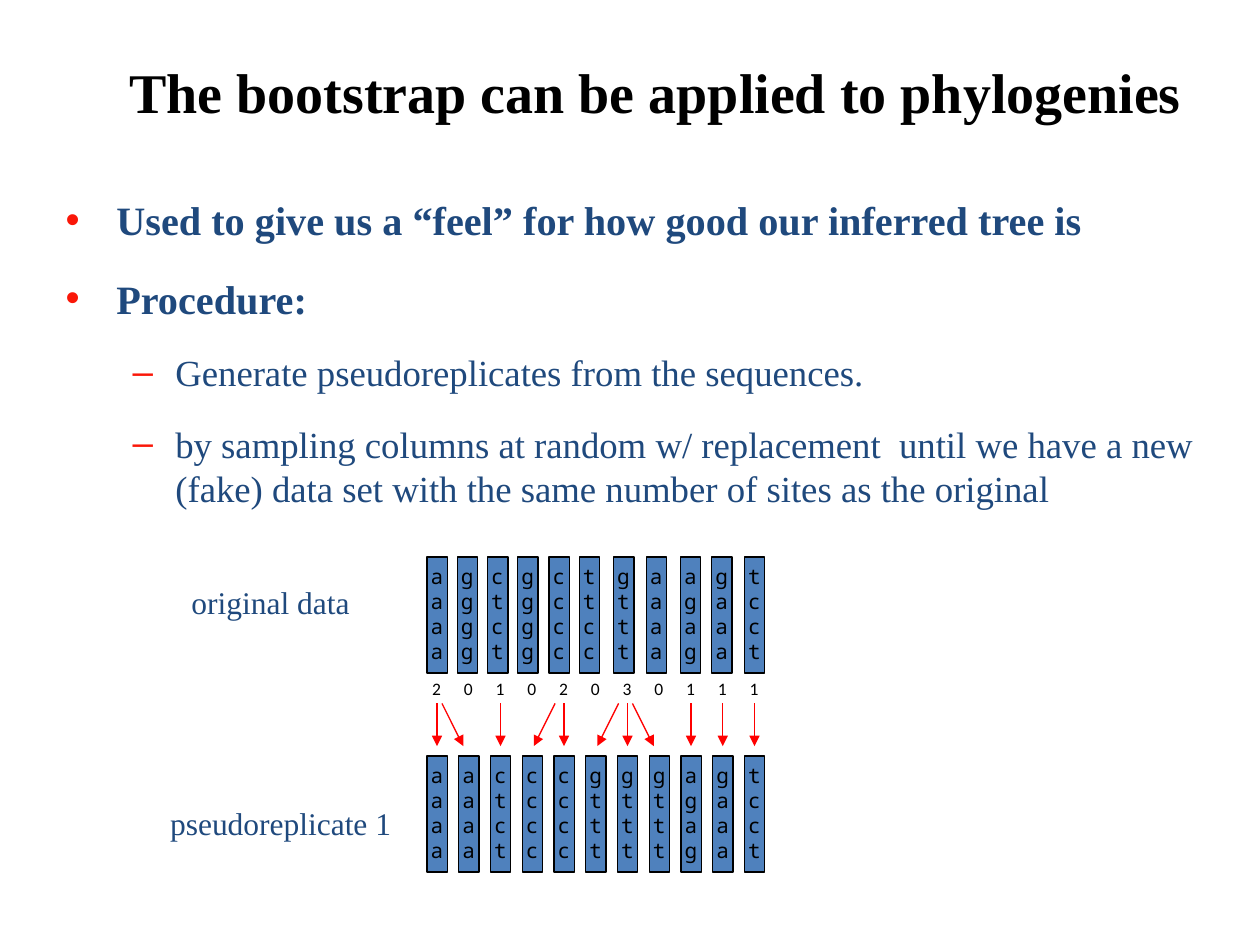
from lxml.etree import SubElement
from pptx import Presentation
from pptx.dml.color import RGBColor
from pptx.enum.shapes import MSO_CONNECTOR, MSO_SHAPE
from pptx.enum.text import MSO_ANCHOR, MSO_AUTO_SIZE, PP_ALIGN
from pptx.oxml.ns import qn
from pptx.util import Cm, Pt

COLORS = {"black": "000000", "navy": "1F497D", "bullet": "FA1708",
          "column": "4F81BD", "arrow": "FF0000"}
SERIF, SANS, MONO = "Times New Roman", "Calibri", "Noto Sans Mono"

BULLETS = [
    (0, "Used to give us a “feel” for how good our inferred tree is"),
    (0, "Procedure:"),
    (1, "Generate pseudoreplicates from the sequences."),
    (1, "by sampling columns at random w/ replacement  until we have a new "
        "(fake) data set with the same number of sites as the original"),
]
# Per level: size, bold, text indent (cm), hanging indent (cm), bullet
LEVELS = [(23, True, 1.02, -1.02, "•"), (21, False, 2.21, -0.86, "–")]

# Alignment columns; spaced letters stand on separate lines
ORIGINAL = ["a a a a", "gggg", "ctct", "gggg", "cccc", "ttcc",
            "gttt", "a a a a", "agag", "gaaa", "tcct"]
COUNTS = [2, 0, 1, 0, 2, 0, 3, 0, 1, 1, 1]
PITCH = 0.64
ORIGINAL_X = [0, 0.61, 1.22, 1.83, 2.46, 3.07, 3.76, 4.42, 5.11, 5.74, 6.4]
# Start and end offsets of an arrow that leans left, falls straight, leans right
LEANS = {-1: (-0.18, -0.61), 0: (0, 0), 1: (0.1, 0.53)}


def rgb(name):
    return RGBColor.from_string(COLORS[name])


def add_run(p, text, font, size, color, bold=False):
    r = p.add_run()
    r.text = text
    r.font.name, r.font.size, r.font.bold = font, Pt(size), bold
    r.font.color.rgb = rgb(color)


def place(sp, left, top, width, height):
    sp.left, sp.top, sp.width, sp.height = map(Cm, (left, top, width, height))


def add_text(s, left, top, width, height, lines, font, size, color, wrap=False):
    tf = s.shapes.add_textbox(*map(Cm, (left, top, width, height))).text_frame
    tf.word_wrap = wrap
    for i, line in enumerate(lines):
        p = tf.add_paragraph() if i else tf.paragraphs[0]
        add_run(p, line, font, size, color)


def add_title(s, left, top, width, height):
    sp = s.shapes.title
    place(sp, left, top, width, height)
    tf = sp.text_frame
    tf.auto_size = MSO_AUTO_SIZE.NONE
    tf.vertical_anchor = MSO_ANCHOR.MIDDLE
    p = tf.paragraphs[0]
    p.alignment = PP_ALIGN.CENTER
    add_run(p, "The bootstrap can be applied to phylogenies", SERIF, 32, "black", True)


def format_bullet(p, margin, indent, char):
    pPr = p._p.get_or_add_pPr()
    pPr.set("marL", str(Cm(margin)))
    pPr.set("indent", str(Cm(indent)))
    SubElement(SubElement(pPr, qn("a:spcBef")), qn("a:spcPct"), val="75000")
    SubElement(SubElement(pPr, qn("a:buClr")), qn("a:srgbClr"), val=COLORS["bullet"])
    SubElement(pPr, qn("a:buChar"), char=char)


def add_bullets(s, left, top, width, height):
    sp = s.placeholders[1]
    place(sp, left, top, width, height)
    tf = sp.text_frame
    tf.auto_size = MSO_AUTO_SIZE.NONE
    for i, (level, text) in enumerate(BULLETS):
        p = tf.add_paragraph() if i else tf.paragraphs[0]
        p.level = level
        size, bold, margin, indent, char = LEVELS[level]
        format_bullet(p, margin, indent, char)
        add_run(p, text, SERIF, size, "navy", bold)


def add_columns(s, left, top, columns, offsets):
    for letters, dx in zip(columns, offsets):
        sp = s.shapes.add_shape(MSO_SHAPE.RECTANGLE, Cm(left + dx), Cm(top),
                                Cm(0.41), Cm(2.34))
        sp.shadow.inherit = False
        sp.fill.solid()
        sp.fill.fore_color.rgb = rgb("column")
        sp.line.color.rgb = rgb("black")
        sp.line.width = Pt(0.75)
        add_text(s, left + dx - 0.18, top, 0.64, 2.3, letters.split(),
                 MONO, 12, "black", wrap=True)


def add_arrow(s, x1, y1, x2, y2):
    c = s.shapes.add_connector(MSO_CONNECTOR.STRAIGHT, *map(Cm, (x1, y1, x2, y2)))
    c.line.color.rgb = rgb("arrow")
    c.line.width = Pt(0.75)
    SubElement(c.line._get_or_add_ln(), qn("a:tailEnd"), type="triangle")
    SubElement(c._element.spPr, qn("a:effectLst"))


def add_resampling(s, left, top):
    """Original columns, draw counts, arrows and the resampled columns."""
    add_columns(s, left, top, ORIGINAL, ORIGINAL_X)
    drawn = []
    for i, count in enumerate(COUNTS):
        x = left + i * PITCH
        add_text(s, x - 0.15, top + 2.31, 0.69, 0.69, [str(count)], SANS, 10, "black")
        for _ in range(count):
            start, end = LEANS[len(drawn) - i]
            add_arrow(s, x + 0.2 + start, top + 2.95, x + 0.2 + end, top + 3.81)
            drawn.append(ORIGINAL[i])
    add_columns(s, left, top + 4.01, drawn, [i * PITCH for i in range(len(drawn))])
    # Row labels
    add_text(s, left - 5, top + 0.4, 3.71, 1.02, ["original data"], SERIF, 18, "navy")
    add_text(s, left - 5.43, top + 4.85, 4.98, 1.02, ["pseudoreplicate 1"],
             SERIF, 18, "navy")


def main():
    prs = Presentation()
    prs.slide_width, prs.slide_height = Cm(25.4), Cm(19.05)
    s = prs.slides.add_slide(prs.slide_layouts[1])
    add_title(s, 1.88, 0.61, 22.68, 2.46)
    add_bullets(s, 1.07, 3.81, 23.29, 7.19)
    add_resampling(s, 8.61, 11.23)
    prs.save("out.pptx")


if __name__ == "__main__":
    main()
